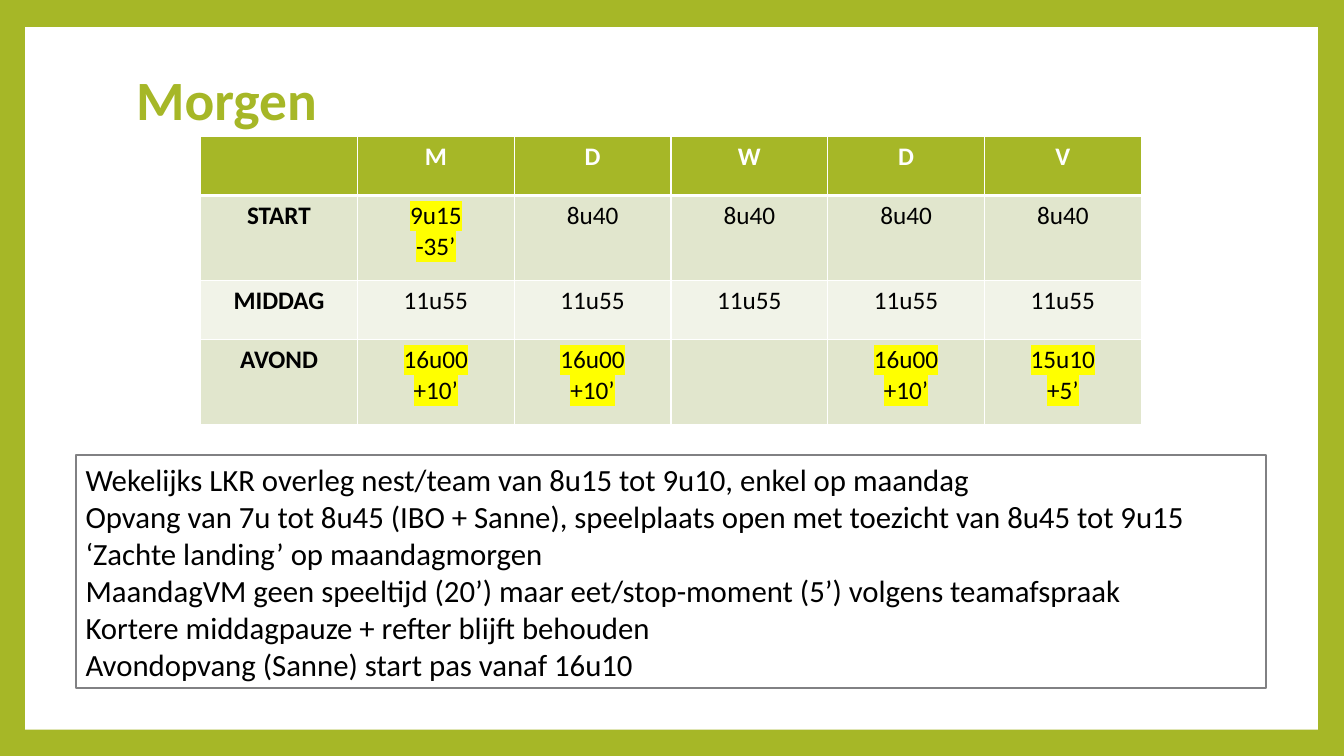
"""Build the slide with the adjusted school hours around Monday morning."""
from lxml import etree
from pptx import Presentation
from pptx.dml.color import RGBColor
from pptx.enum.shapes import MSO_SHAPE
from pptx.enum.text import MSO_ANCHOR, MSO_AUTO_SIZE, PP_ALIGN
from pptx.oxml.ns import qn
from pptx.util import Inches, Pt

RECTANGLE = MSO_SHAPE.RECTANGLE
MIDDLE = MSO_ANCHOR.MIDDLE
NO_AUTOFIT = MSO_AUTO_SIZE.NONE
LEFT, CENTER = PP_ALIGN.LEFT, PP_ALIGN.CENTER

FONT = "Calibri"
COLORS = {
    "green": "A6B727",
    "white": "FFFFFF",
    "black": "000000",
    "band_dark": "E1E6CD",
    "band_light": "F1F3E8",
    "highlight": "FFFF00",
    "frame": "818183",
}

TITLE = "Morgen"
HOURS = [
    ["", "M", "D", "W", "D", "V"],
    ["START", "9u15\n-35’", "8u40", "8u40", "8u40", "8u40"],
    ["MIDDAG", "11u55", "11u55", "11u55", "11u55", "11u55"],
    ["AVOND", "16u00\n+10’", "16u00\n+10’", "", "16u00\n+10’", "15u10\n+5’"],
]
ROW_HEIGHTS = [0.59, 0.84, 0.59, 0.84]
ROW_FILLS = ["green", "band_dark", "band_light", "band_dark"]
AGREEMENTS = [
    "Wekelijks LKR overleg nest/team van 8u15 tot 9u10, enkel op maandag",
    "Opvang van 7u tot 8u45 (IBO + Sanne), speelplaats open met toezicht van 8u45 tot 9u15",
    "‘Zachte landing’ op maandagmorgen",
    "MaandagVM geen speeltijd (20’) maar eet/stop-moment (5’) volgens teamafspraak",
    "Kortere middagpauze + refter blijft behouden",
    "Avondopvang (Sanne) start pas vanaf 16u10",
]


def rgb(name):
    return RGBColor.from_string(COLORS[name])


def box(left, top, width, height):
    return [Inches(length) for length in (left, top, width, height)]


def style(paragraph, size, color, bold=False, align=LEFT):
    paragraph.alignment = align
    font = paragraph.font
    font.name, font.size, font.bold = FONT, Pt(size), bold
    font.color.rgb = rgb(color)


def add_color(parent, name):
    etree.SubElement(parent, qn("a:srgbClr"), val=COLORS[name])


def highlight(run):
    marker = etree.SubElement(run._r.get_or_add_rPr(), qn("a:highlight"))
    add_color(marker, "highlight")


def set_borders(cell, top, bottom):
    widths = {"a:lnL": 1, "a:lnR": 1, "a:lnT": top, "a:lnB": bottom}
    properties = cell._tc.get_or_add_tcPr()
    for position, (tag, width) in enumerate(widths.items()):
        border = etree.Element(qn(tag), w=str(Pt(width)))
        add_color(etree.SubElement(border, qn("a:solidFill")), "white")
        properties.insert(position, border)


def add_rectangle(slide, place):
    rectangle = slide.shapes.add_shape(RECTANGLE, *box(*place))
    rectangle.shadow.inherit = False
    rectangle.fill.solid()
    rectangle.fill.fore_color.rgb = rgb("white")
    return rectangle


def add_title(slide):
    title = slide.shapes.title
    title.left, title.top, title.width, title.height = box(1.25, 0.67, 10.8, 0.69)
    frame = title.text_frame
    frame.text = TITLE
    frame.auto_size = NO_AUTOFIT
    frame.vertical_anchor = MIDDLE
    style(frame.paragraphs[0], 39.6, "green", bold=True)
    frame.paragraphs[0].line_spacing = 0.9


def add_hours(slide):
    place = box(1.99, 1.35, 9.33, sum(ROW_HEIGHTS))
    table = slide.shapes.add_table(len(HOURS), len(HOURS[0]), *place).table
    for r, texts in enumerate(HOURS):
        table.rows[r].height = Inches(ROW_HEIGHTS[r])
        for c, text in enumerate(texts):
            cell = table.cell(r, c)
            cell.text = text
            cell.fill.solid()
            cell.fill.fore_color.rgb = rgb(ROW_FILLS[r])
            set_borders(cell, 3 if r == 1 else 1, 3 if r == 0 else 1)
            for paragraph in cell.text_frame.paragraphs:
                color = "white" if r == 0 else "black"
                style(paragraph, 18, color, r == 0 or c == 0, CENTER)
                if "\n" in text:
                    highlight(paragraph.runs[0])


def add_agreements(slide):
    agreements = add_rectangle(slide, (0.75, 4.51, 11.81, 2.32))
    agreements.line.color.rgb = rgb("frame")
    agreements.line.width = Pt(1.5)
    frame = agreements.text_frame
    frame.word_wrap = True
    frame.text = "\n".join(AGREEMENTS)
    for paragraph in frame.paragraphs:
        style(paragraph, 22, "black")


def main():
    presentation = Presentation()
    presentation.slide_width = Inches(13.33)
    presentation.slide_height = Inches(7.5)
    slide = presentation.slides.add_slide(presentation.slide_layouts[5])
    slide.background.fill.solid()
    slide.background.fill.fore_color.rgb = rgb("green")
    page = add_rectangle(slide, (0.25, 0.27, 12.82, 6.97))
    page.line.fill.background()
    slide.shapes._spTree.insert(2, page._element)
    add_title(slide)
    add_hours(slide)
    add_agreements(slide)
    presentation.save("out.pptx")


if __name__ == "__main__":
    main()
